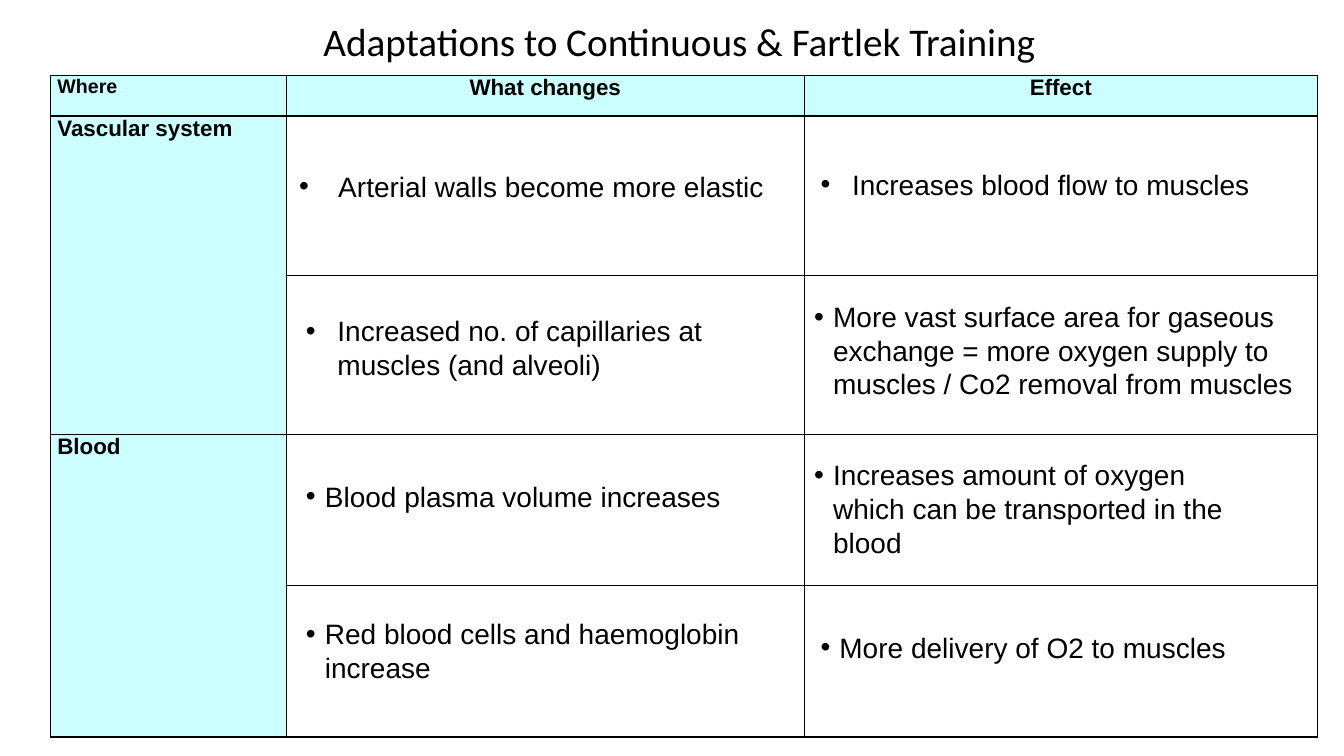
from dataclasses import dataclass

from lxml.etree import SubElement
from pptx import Presentation
from pptx.dml.color import RGBColor
from pptx.enum.text import MSO_AUTO_SIZE, PP_ALIGN
from pptx.oxml.ns import qn
from pptx.util import Pt


@dataclass(frozen=True)
class Theme:
    ink: str = "000000"
    tint: str = "CCFFFF"
    head: str = "Calibri"
    body: str = "Arial"
    title: int = 28
    note: int = 20
    label: int = 16
    small: int = 14
    line: int = 1


THEME = Theme()

COLS = (168.5, 370, 366.5)
ROWS = (28.8, 113.8, 113.8, 108, 108)

# Row, column, text, size, alignment
LABELS = (
    (0, 0, "Where", THEME.small, PP_ALIGN.LEFT),
    (0, 1, "What changes", THEME.label, PP_ALIGN.CENTER),
    (0, 2, "Effect", THEME.label, PP_ALIGN.CENTER),
    (1, 0, "Vascular system", THEME.label, PP_ALIGN.LEFT),
    (3, 0, "Blood", THEME.label, PP_ALIGN.LEFT),
)

# Left, top, width, height, indent, wrap, text
NOTES = (
    (206.5, 117.5, 348, 31.5, 28, False, "Arterial walls become more elastic"),
    (579, 116, 323, 31.5, 22.5, False, "Increases blood flow to muscles"),
    (211.5, 220.5, 338, 55.5, 22.5, True,
     "Increased no. of capillaries at muscles (and alveoli)"),
    (574.5, 210.5, 381, 80, 13.5, True,
     "More vast surface area for gaseous exchange = more oxygen supply to "
     "muscles / Co2 removal from muscles"),
    (211.5, 339, 313, 31.5, 13.5, False, "Blood plasma volume increases"),
    (211.5, 437, 351.5, 55.5, 13.5, True,
     "Red blood cells and haemoglobin increase"),
    (574.5, 323.5, 322, 80, 13.5, True,
     "Increases amount of oxygen which can be transported in the blood"),
    (579, 446.5, 306, 31.5, 13.5, False, "More delivery of O2 to muscles"),
)


def style(para, face, size, bold=False):
    for run in para.runs:
        run.font.name = face
        run.font.size = Pt(size)
        run.font.bold = bold
        run.font.color.rgb = RGBColor.from_string(THEME.ink)


def add_text(slide, box, text, face, size, wrap=False):
    shape = slide.shapes.add_textbox(*map(Pt, box))
    frame = shape.text_frame
    frame.word_wrap = wrap
    frame.auto_size = MSO_AUTO_SIZE.SHAPE_TO_FIT_TEXT
    frame.text = text
    para = frame.paragraphs[0]
    style(para, face, size)
    return para


def add_note(slide, left, top, width, height, indent, wrap, text):
    box = (left, top, width, height)
    para = add_text(slide, box, text, THEME.body, THEME.note, wrap)
    props = para._p.get_or_add_pPr()
    props.set("marL", str(Pt(indent)))
    props.set("indent", str(-Pt(indent)))
    SubElement(props, qn("a:buFont"), typeface=THEME.body)
    SubElement(props, qn("a:buChar"), char="•")


def add_edges(cell):
    props = cell._tc.get_or_add_tcPr()
    for side in ("lnL", "lnR", "lnT", "lnB"):
        edge = SubElement(props, qn(f"a:{side}"), w=str(Pt(THEME.line)))
        fill = SubElement(edge, qn("a:solidFill"))
        SubElement(fill, qn("a:srgbClr"), val=THEME.ink)


def add_grid(slide):
    frame = slide.shapes.add_table(
        len(ROWS), len(COLS), Pt(36), Pt(54), Pt(sum(COLS)), Pt(sum(ROWS)))
    table = frame.table
    table.first_row = table.horz_banding = False
    for col, width in zip(table.columns, COLS):
        col.width = Pt(width)
    for row, height in zip(table.rows, ROWS):
        row.height = Pt(height)

    # Borders and fills: the first row and column are tinted
    for r in range(len(ROWS)):
        for c in range(len(COLS)):
            cell = table.cell(r, c)
            cell.margin_left = cell.margin_right = Pt(5)
            cell.margin_top = cell.margin_bottom = Pt(0)
            add_edges(cell)
            if r == 0 or c == 0:
                cell.fill.solid()
                cell.fill.fore_color.rgb = RGBColor.from_string(THEME.tint)
            else:
                cell.fill.background()

    # Each system spans two rows
    for r in (1, 3):
        table.cell(r, 0).merge(table.cell(r + 1, 0))

    for r, c, text, size, align in LABELS:
        label = table.cell(r, c).text_frame
        label.text = text
        para = label.paragraphs[0]
        para.alignment = align
        style(para, THEME.body, size, bold=True)


def main():
    deck = Presentation()
    deck.slide_width, deck.slide_height = Pt(960), Pt(540)
    slide = deck.slides.add_slide(deck.slide_layouts[6])

    # Table and title
    add_grid(slide)
    add_text(slide, (224, 8.5, 529, 41),
             "Adaptations to Continuous & Fartlek Training",
             THEME.head, THEME.title)

    # Bulleted notes over the cells
    for note in NOTES:
        add_note(slide, *note)

    deck.save("out.pptx")


if __name__ == "__main__":
    main()
